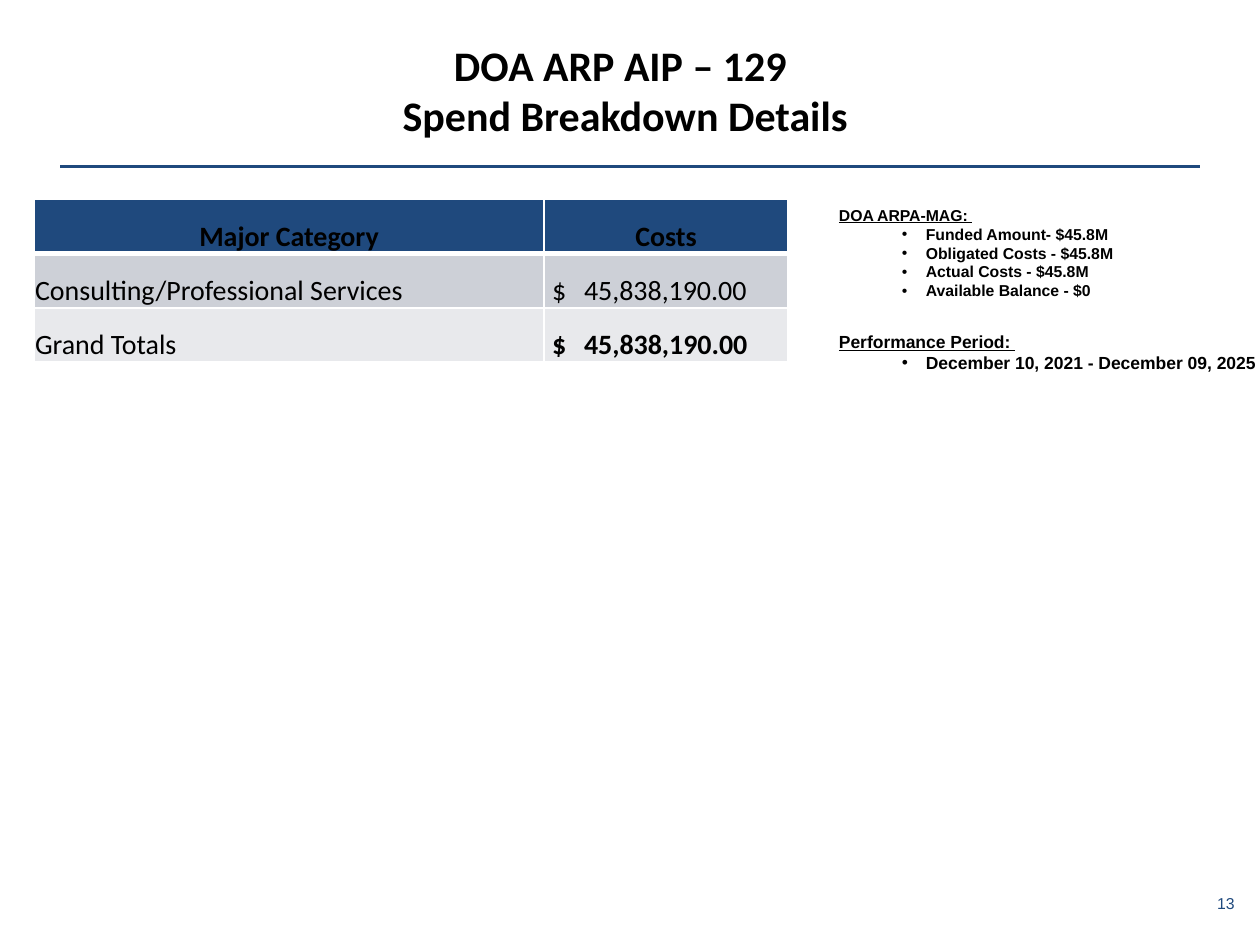
from lxml import etree
from pptx import Presentation
from pptx.dml.color import RGBColor
from pptx.enum.text import MSO_ANCHOR, MSO_AUTO_SIZE, PP_ALIGN
from pptx.oxml.ns import qn
from pptx.util import Pt

COLORS = {"navy": "1F497D", "black": "000000", "white": "FFFFFF",
          "band_dark": "CDD0D7", "band_light": "E8E9EC"}
HEADING = {"name": "Calibri", "size": Pt(24), "bold": True}
CELL = {"name": "Calibri", "size": Pt(16), "bold": False}
NOTE = {"name": "Arial", "bold": True}
PAGE = {"name": "Arial", "size": Pt(9)}

COLUMN_WIDTHS = [291.6, 139.2]
ROW_HEIGHT = 31
AMOUNT_TAB = 18.3
COST_ROWS = [
    ("Major Category", "Costs"),
    ("Consulting/Professional Services", "$\t45,838,190.00"),
    ("Grand Totals", "$\t45,838,190.00"),
]
FUNDING = ["Funded Amount- $45.8M", "Obligated Costs - $45.8M",
           "Actual Costs - $45.8M", "Available Balance - $0"]


def rgb(key):
    return RGBColor.from_string(COLORS[key])


def format_font(font, style, color="black"):
    for attribute, value in style.items():
        setattr(font, attribute, value)
    font.color.rgb = rgb(color)


def set_margins(target, left, top, right, bottom):
    margins = {"left": left, "top": top, "right": right, "bottom": bottom}
    for side, length in margins.items():
        setattr(target, f"margin_{side}", Pt(length))


def add_title(slide, lines):
    title = slide.shapes.title
    title.left, title.top, title.width, title.height = Pt(19.4), Pt(13.7), Pt(666.7), Pt(74.9)
    frame = title.text_frame
    frame.auto_size = MSO_AUTO_SIZE.NONE
    frame.vertical_anchor = MSO_ANCHOR.MIDDLE
    set_margins(frame, 10.8, 3.6, 7.2, 3.6)
    frame.text = "\n".join(lines)
    for paragraph in frame.paragraphs:
        paragraph.alignment = PP_ALIGN.CENTER
        format_font(paragraph.font, HEADING)


def add_rule(slide):
    rule = slide.shapes.add_connector(1, Pt(34.5), Pt(95), Pt(686), Pt(95))
    rule.line.color.rgb = rgb("navy")
    rule.line.width = Pt(1.5)
    etree.SubElement(rule._element.spPr, qn("a:effectLst"))


def add_bullet(paragraph):
    properties = paragraph._p.get_or_add_pPr()
    properties.set("marL", str(Pt(49.7)))
    properties.set("indent", str(-Pt(13.7)))
    etree.SubElement(properties, qn("a:buFont"), typeface="Arial")
    etree.SubElement(properties, qn("a:buChar"), char="•")


def add_note(slide, top, width, height, size, heading, items):
    """Underlined heading with bulleted lines below it."""
    note = slide.shapes.add_textbox(Pt(472.3), Pt(top), Pt(width), Pt(height))
    frame = note.text_frame
    frame.word_wrap = True
    frame.text = "\n".join([heading, *items])
    for index, paragraph in enumerate(frame.paragraphs):
        if index:
            paragraph.level = 1
            add_bullet(paragraph)
        style = {**NOTE, "size": Pt(size), "underline": index == 0}
        for run in paragraph.runs:
            format_font(run.font, style)


def add_borders(cell, bottom_width):
    properties = cell._tc.get_or_add_tcPr()
    widths = {"lnL": 1, "lnR": 1, "lnT": 1, "lnB": bottom_width}
    for position, (side, width) in enumerate(widths.items()):
        border = etree.Element(qn(f"a:{side}"), w=str(Pt(width)))
        fill = etree.SubElement(border, qn("a:solidFill"))
        etree.SubElement(fill, qn("a:srgbClr"), val=COLORS["white"])
        properties.insert(position, border)


def add_amount_tab(paragraph):
    tabs = etree.SubElement(paragraph._p.get_or_add_pPr(), qn("a:tabLst"))
    etree.SubElement(tabs, qn("a:tab"), pos=str(Pt(AMOUNT_TAB)), algn="l")


def add_cost_table(slide):
    costs = slide.shapes.add_table(
        len(COST_ROWS), len(COLUMN_WIDTHS), Pt(19.4), Pt(114),
        Pt(sum(COLUMN_WIDTHS)), Pt(ROW_HEIGHT * len(COST_ROWS))).table
    for column, width in zip(costs.columns, COLUMN_WIDTHS):
        column.width = Pt(width)
    fills = ["navy", "band_dark", "band_light"]
    for r, (texts, fill) in enumerate(zip(COST_ROWS, fills)):
        costs.rows[r].height = Pt(ROW_HEIGHT)
        for c, text in enumerate(texts):
            cell = costs.cell(r, c)
            cell.text = text
            cell.vertical_anchor = MSO_ANCHOR.BOTTOM
            cell.fill.solid()
            cell.fill.fore_color.rgb = rgb(fill)
            is_header, is_amount = r == 0, r > 0 and c == 1
            set_margins(cell, 4.5 if is_amount else 0.7, 0.7, 0.7, 0)
            add_borders(cell, 3 if is_header else 1)
            paragraph = cell.text_frame.paragraphs[0]
            paragraph.alignment = PP_ALIGN.CENTER if is_header else PP_ALIGN.LEFT
            if is_amount:
                add_amount_tab(paragraph)
            is_total = r == len(COST_ROWS) - 1 and is_amount
            style = {**CELL, "bold": is_header or is_total}
            format_font(paragraph.runs[0].font, style)


def add_page_number(slide, number):
    page = slide.shapes.add_textbox(Pt(689), Pt(507.6), Pt(23.8), Pt(17.3))
    frame = page.text_frame
    frame.word_wrap = False
    set_margins(frame, 6.5, 2.9, 6.5, 2.9)
    frame.text = number
    format_font(frame.paragraphs[0].runs[0].font, PAGE, "navy")


def main():
    deck = Presentation()
    deck.slide_width, deck.slide_height = Pt(720), Pt(540)
    slide = deck.slides.add_slide(deck.slide_layouts[5])
    add_rule(slide)
    add_page_number(slide, "13")
    add_title(slide, ["DOA ARP AIP – 129", " Spend Breakdown Details"])
    add_note(slide, 113.8, 228.2, 85, 9, "DOA ARPA-MAG: ", FUNDING)
    add_cost_table(slide)
    add_note(slide, 185.8, 265, 55.4, 10, "Performance Period: ",
             ["December 10, 2021 - December 09, 2025"])
    deck.save("out.pptx")


if __name__ == "__main__":
    main()
